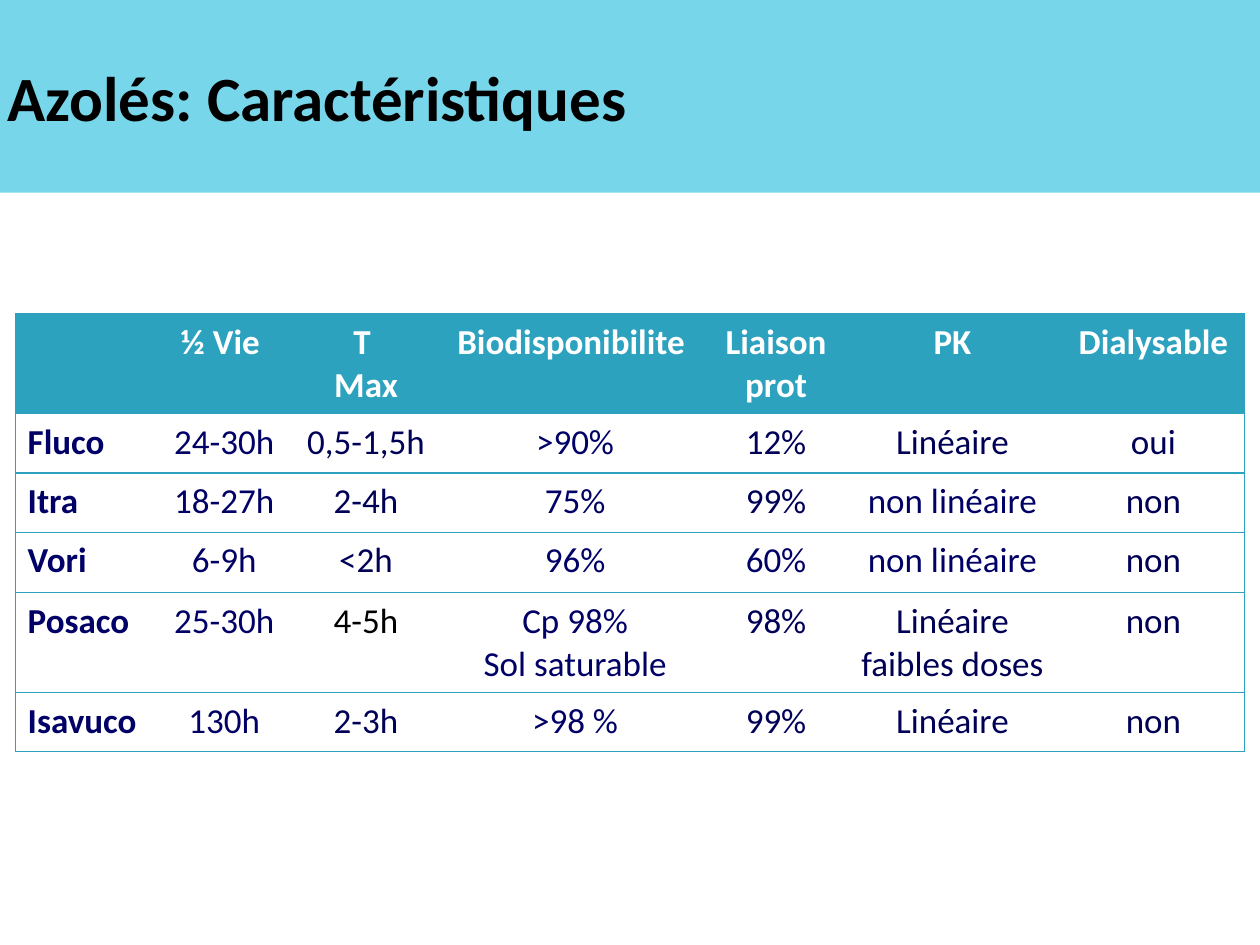
import lxml.etree
import pptx
import pptx.dml.color
import pptx.enum.text
import pptx.oxml.ns
import pptx.util

Inches, Pt = pptx.util.Inches, pptx.util.Pt
ALIGN = pptx.enum.text.PP_ALIGN

COLORS = {
    "band": "78D6EA",
    "teal": "2DA2BF",
    "white": "FFFFFF",
    "black": "000000",
    "navy": "000066",
    "dark": "000056",
}
FONT = "Calibri"

TITLE = "Azolés: Caractéristiques"
# A line break inside a cell starts a new paragraph.
ROWS = [
    ("", "½ Vie ", "T \nMax", "Biodisponibilite ", "Liaison\nprot", "PK", "Dialysable"),
    ("Fluco", "24-30h", "0,5-1,5h", ">90%", "12%", "Linéaire", "oui"),
    ("Itra", "18-27h", "2-4h", "75%", "99%", "non linéaire", "non"),
    ("Vori", "6-9h", "<2h", "96%", "60%", "non linéaire", "non"),
    ("Posaco", "25-30h", "4-5h", "Cp 98%\nSol saturable", "98%", "Linéaire faibles doses", "non"),
    ("Isavuco", "130h", "2-3h", ">98 %", "99%", "Linéaire", "non"),
]
COLUMN_WIDTHS = [1.13, 1.06, 1.19, 2.13, 1.06, 1.74, 1.45]
ROW_HEIGHTS = [0.79, 0.47, 0.47, 0.48, 0.79, 0.47]
COLUMN_INKS = ["navy", "navy", "dark", "navy", "dark", "dark", "dark"]
INK_EXCEPTIONS = {(2, 5): "navy", (3, 4): "navy", (3, 5): "navy", (4, 2): "black"}


def rgb(name):
    return pptx.dml.color.RGBColor.from_string(COLORS[name])


def add_text(p, text, size, ink, bold):
    r = p.add_run()
    r.text = text
    r.font.name = FONT
    r.font.size = Pt(size)
    r.font.bold = bold
    r.font.color.rgb = rgb(ink)


def set_borders(cell, visible):
    """Draw the sides named in visible (letters of LRTB) and hide the others."""
    qn = pptx.oxml.ns.qn
    tcPr = cell._tc.get_or_add_tcPr()
    for side in "LRTB":
        ln = lxml.etree.SubElement(tcPr, qn(f"a:ln{side}"), w=str(Pt(0.75)))
        if side in visible:
            fill = lxml.etree.SubElement(ln, qn("a:solidFill"))
            lxml.etree.SubElement(fill, qn("a:srgbClr"), val=COLORS["teal"])
        else:
            lxml.etree.SubElement(ln, qn("a:noFill"))


def fill_cell(cell, row, col):
    header = row == 0
    sides = "TB"
    if col == 0:
        sides += "L"
    if col == len(COLUMN_WIDTHS) - 1:
        sides += "R"
    set_borders(cell, sides)
    if header:
        cell.fill.solid()
        cell.fill.fore_color.rgb = rgb("teal")
        ink = "white"
    else:
        cell.fill.background()
        ink = INK_EXCEPTIONS.get((row, col), COLUMN_INKS[col])

    tf = cell.text_frame
    for i, line in enumerate(ROWS[row][col].split("\n")):
        p = tf.add_paragraph() if i else tf.paragraphs[0]
        p.alignment = ALIGN.LEFT if col == 0 else ALIGN.CENTER
        p.line_spacing = 1.02
        if line:
            add_text(p, line, 20, ink, header or col == 0)


def add_title(s):
    sp = s.shapes.title
    sp.left, sp.top = Inches(-0.04), Inches(0)
    sp.width, sp.height = Inches(10.04), Inches(1.53)
    sp.fill.solid()
    sp.fill.fore_color.rgb = rgb("band")
    tf = sp.text_frame
    tf.vertical_anchor = pptx.enum.text.MSO_ANCHOR.MIDDLE
    p = tf.paragraphs[0]
    p.alignment = ALIGN.LEFT
    add_text(p, TITLE, 36, "black", True)


def add_drug_table(s):
    frame = s.shapes.add_table(
        len(ROWS), len(COLUMN_WIDTHS), Inches(0.12), Inches(2.49),
        Inches(sum(COLUMN_WIDTHS)), Inches(sum(ROW_HEIGHTS)))
    table = frame.table
    table.horz_banding = False
    for column, width in zip(table.columns, COLUMN_WIDTHS):
        column.width = Inches(width)
    for row, height in enumerate(ROW_HEIGHTS):
        table.rows[row].height = Inches(height)
        for col in range(len(COLUMN_WIDTHS)):
            fill_cell(table.cell(row, col), row, col)


def main():
    prs = pptx.Presentation()
    prs.slide_width, prs.slide_height = Inches(10), Inches(7.5)
    s = prs.slides.add_slide(prs.slide_layouts.get_by_name("Title Only"))
    add_drug_table(s)
    add_title(s)
    prs.save("out.pptx")


if __name__ == "__main__":
    main()
